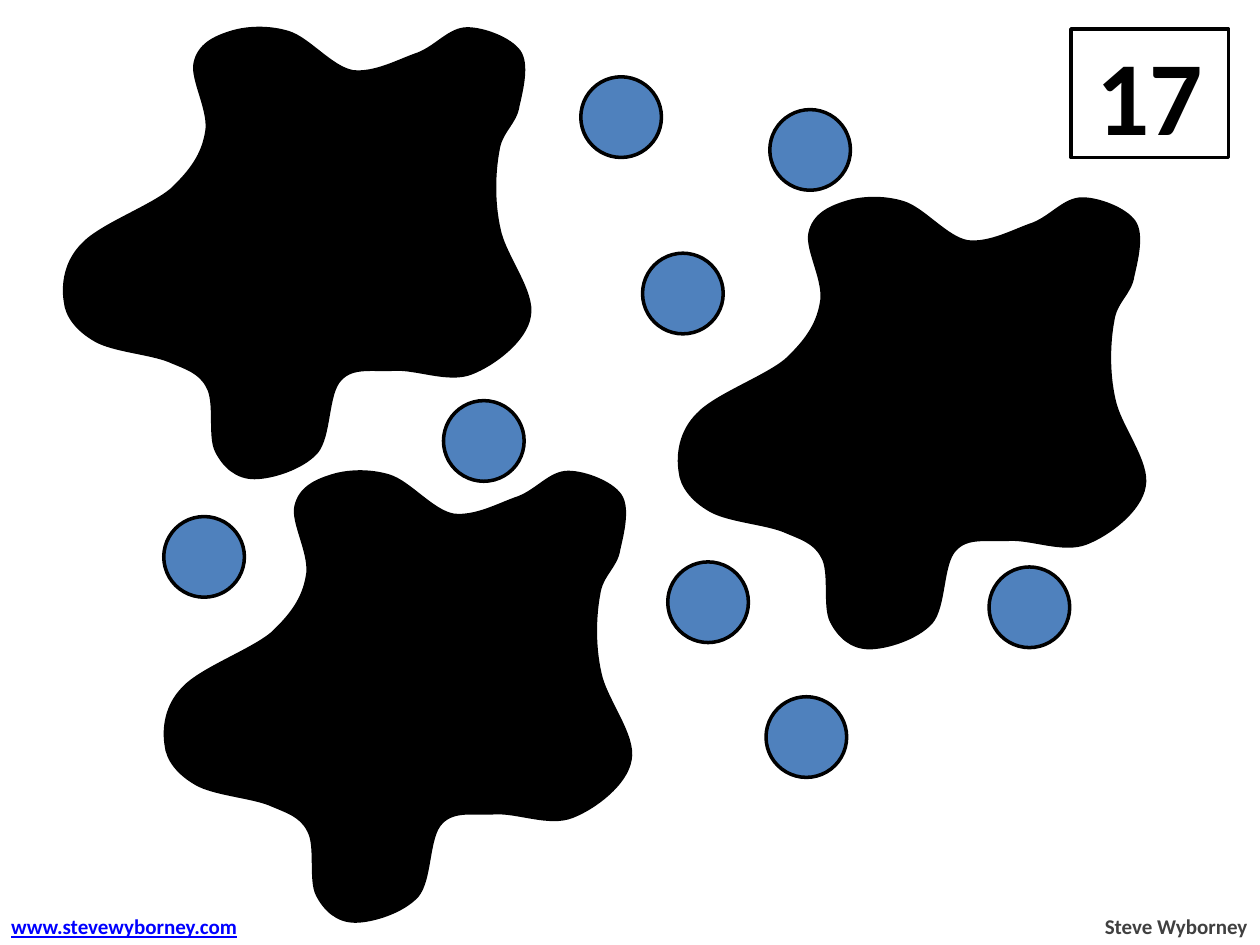
from lxml.etree import SubElement
from pptx import Presentation
from pptx.dml.color import RGBColor
from pptx.enum.shapes import MSO_SHAPE as SHAPE
from pptx.enum.text import MSO_ANCHOR as ANCHOR, PP_ALIGN as ALIGN
from pptx.oxml.ns import qn
from pptx.util import Inches, Pt

COLS, ROWS = 100, 75
WIDTH, HEIGHT = Inches(10), Inches(7.5)
CELL = WIDTH // COLS

DOT_SIZE = 6.4
DOTS = [(46.1, 6.1), (61.1, 8.7), (51, 20.1), (35.2, 31.8),
        (13, 41), (53, 44.6), (78.5, 45), (60.8, 55.3)]
BLOBS = [(13.1, 37.5), (53.9, 15.8), (5.1, 2.3)]

# Outline in tenths of a cell: each row is two control points and an end point
BLOB_START = (25, 247)
BLOB_CURVES = [
    [(11, 239), (2, 228), (1, 216)],
    [(-1, 203), (1, 185), (15, 171)],
    [(29, 156), (68, 142), (85, 128)],
    [(101, 113), (110, 100), (113, 83)],
    [(117, 66), (101, 40), (104, 27)],
    [(107, 13), (119, 7), (132, 3)],
    [(144, -1), (162, -2), (178, 3)],
    [(194, 8), (212, 31), (229, 34)],
    [(247, 36), (266, 25), (281, 20)],
    [(296, 14), (306, 0), (320, 0)],
    [(333, 0), (354, 8), (361, 18)],
    [(368, 28), (363, 48), (360, 61)],
    [(358, 75), (346, 81), (344, 97)],
    [(341, 113), (340, 137), (345, 159)],
    [(349, 180), (373, 209), (369, 228)],
    [(366, 247), (341, 266), (323, 273)],
    [(305, 280), (280, 269), (262, 270)],
    [(245, 271), (229, 267), (219, 278)],
    [(208, 289), (211, 323), (200, 336)],
    [(188, 349), (164, 356), (151, 356)],
    [(137, 356), (127, 347), (121, 335)],
    [(115, 323), (121, 296), (114, 284)],
    [(108, 272), (97, 269), (83, 263)],
    [(68, 257), (39, 255), BLOB_START],
]


def rgb(color):
    return RGBColor.from_string(color)


def cells(*lengths):
    """Turn grid lengths into EMU."""
    return [round(n * CELL) for n in lengths]


def paint(sp, fill):
    sp.shadow.inherit = False
    sp.fill.solid()
    sp.fill.fore_color.rgb = rgb(fill)
    sp.line.color.rgb = rgb("000000")
    sp.line.width = Pt(2)


def write(tf, text, size=12, color="404040", align=ALIGN.LEFT, underline=None):
    p = tf.paragraphs[0]
    p.alignment = align
    r = p.add_run()
    r.text = text
    r.font.name = "Calibri"
    r.font.size = Pt(size)
    r.font.bold = True
    r.font.underline = underline
    r.font.color.rgb = rgb(color)


def add_number(s, box, text):
    sp = s.shapes.add_shape(SHAPE.RECTANGLE, *cells(*box))
    paint(sp, "FFFFFF")
    sp.text_frame.vertical_anchor = ANCHOR.MIDDLE
    write(sp.text_frame, text, size=60, color="000000", align=ALIGN.CENTER)


def add_footer(s, box, text, **style):
    tf = s.shapes.add_textbox(*cells(*box)).text_frame
    tf.word_wrap = False
    write(tf, text, **style)


def add_dot(s, left, top):
    sp = s.shapes.add_shape(SHAPE.OVAL, *cells(left, top, DOT_SIZE, DOT_SIZE))
    paint(sp, "4F81BD")


def add_blob(s, left, top):
    """Build the outline from its points, then join each three as a curve."""
    builder = s.shapes.build_freeform(*BLOB_START, scale=CELL / 10)
    builder.add_line_segments([pt for curve in BLOB_CURVES for pt in curve])
    sp = builder.convert_to_shape(*cells(left, top))
    outline = next(sp.element.iter(qn("a:path")))
    lines = outline.findall(qn("a:lnTo"))
    for i in range(0, len(lines), 3):
        curve = SubElement(outline, qn("a:cubicBezTo"))
        for line in lines[i:i + 3]:
            curve.append(line[0])
            outline.remove(line)
    close = outline.find(qn("a:close"))
    if close is not None:
        outline.remove(close)
    SubElement(outline, qn("a:close"))
    paint(sp, "000000")


def main():
    prs = Presentation()
    prs.slide_width, prs.slide_height = WIDTH, HEIGHT
    s = prs.slides.add_slide(prs.slide_layouts[6])
    add_number(s, (85, 2.3, 12.5, 10.2), "17")
    add_footer(s, (COLS - 13.4, ROWS - 3, 13.4, 3), "Steve Wyborney",
               align=ALIGN.RIGHT)
    add_footer(s, (-0.1, ROWS - 3, 20.5, 3), "www.stevewyborney.com",
               color="0000FF", underline=True)
    for left, top in DOTS:
        add_dot(s, left, top)
    for left, top in BLOBS:
        add_blob(s, left, top)
    prs.save("out.pptx")


if __name__ == "__main__":
    main()
